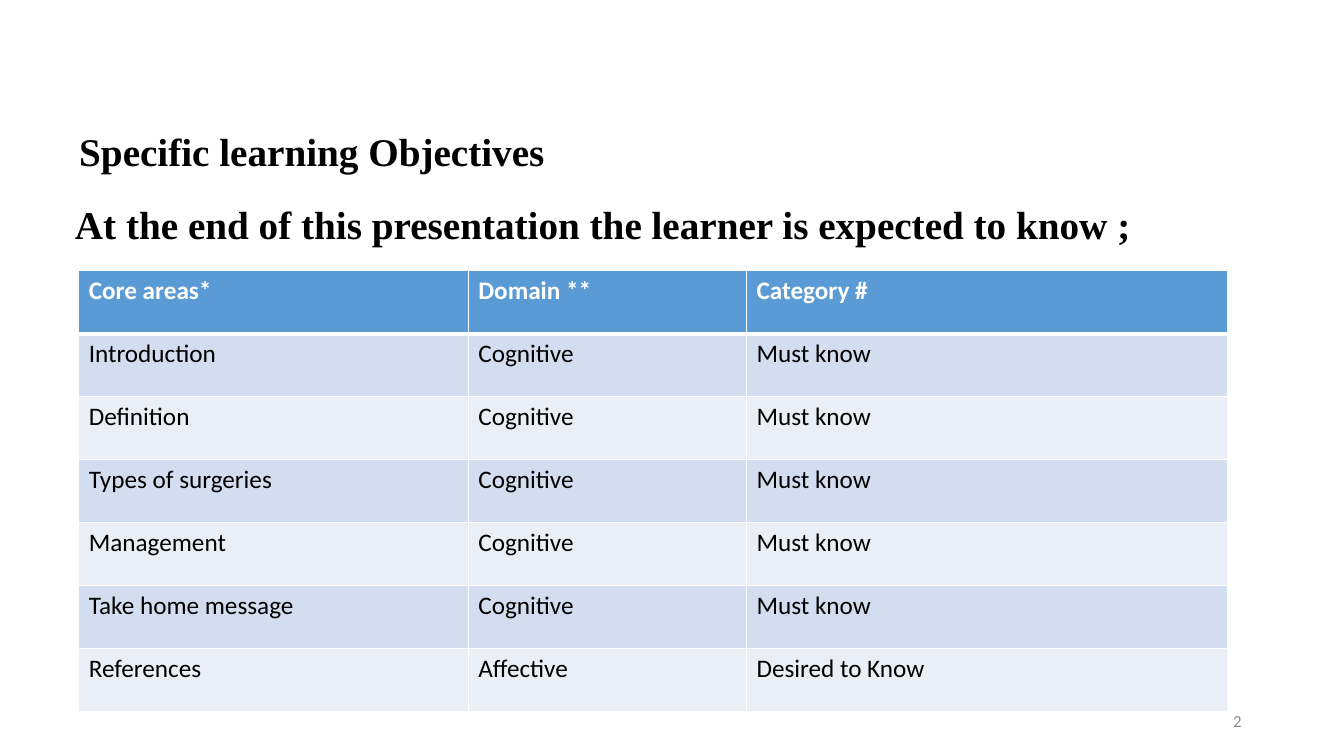
from dataclasses import dataclass

from lxml.etree import SubElement
from pptx import Presentation
from pptx.dml.color import RGBColor
from pptx.enum.text import MSO_ANCHOR, PP_ALIGN
from pptx.oxml.ns import qn
from pptx.slide import Slide
from pptx.table import _Cell
from pptx.text.text import _Paragraph
from pptx.util import Emu, Pt

PX = 9525
BLACK = RGBColor(0x00, 0x00, 0x00)
WHITE = RGBColor(0xFF, 0xFF, 0xFF)
GREY = RGBColor(0x8C, 0x8C, 0x8C)
HEADER_BLUE = RGBColor(0x5B, 0x9B, 0xD5)
BAND_DARK = RGBColor(0xD2, 0xDE, 0xEF)
BAND_LIGHT = RGBColor(0xEA, 0xEF, 0xF7)

TABLE_LEFT, TABLE_TOP, ROW_HEIGHT = 75, 258, 60
COLUMN_WIDTHS = (371, 265, 458)


@dataclass(frozen=True)
class Style:
    """The look of a paragraph."""

    font: str
    size: int
    color: RGBColor
    bold: bool = False


@dataclass(frozen=True)
class Label:
    """A line of text in a box measured in px."""

    text: str
    left: int
    top: int
    width: int
    height: int
    style: Style
    anchor: MSO_ANCHOR = MSO_ANCHOR.MIDDLE
    align: PP_ALIGN = PP_ALIGN.LEFT
    line_spacing: float = 1.0


@dataclass(frozen=True)
class Objective:
    """A row of the objectives table."""

    area: str
    domain: str = "Cognitive"
    category: str = "Must know"


HEADING = Style("Times New Roman", 28, BLACK, True)
HEADER_CELL = Style("Calibri", 18, WHITE, True)
BODY_CELL = Style("Calibri", 18, BLACK)
PAGE_NUMBER = Style("Calibri", 12, GREY)

LABELS = (
    Label("Specific learning Objectives", 66, 111, 1063, 70, HEADING, line_spacing=0.9),
    Label("At the end of this presentation the learner is expected to know ;",
          62, 186, 1090, 55, HEADING, MSO_ANCHOR.TOP),
    Label("2", 904, 667, 288, 38, PAGE_NUMBER, align=PP_ALIGN.RIGHT),
)

OBJECTIVES = (
    Objective("Core areas*", "Domain **", "Category #"),
    Objective("Introduction"),
    Objective("Definition"),
    Objective("Types of surgeries"),
    Objective("Management"),
    Objective("Take home message"),
    Objective("References", "Affective", "Desired to Know"),
)


def write(para: _Paragraph, text: str, style: Style) -> None:
    """Put styled text into a paragraph."""
    para.text = text
    para.font.name = style.font
    para.font.size = Pt(style.size)
    para.font.bold = style.bold
    para.font.color.rgb = style.color


def add_label(page: Slide, label: Label) -> None:
    """Draw one label on the page."""
    box = page.shapes.add_textbox(
        *(Emu(length * PX) for length in (label.left, label.top, label.width, label.height)))
    frame = box.text_frame
    frame.word_wrap = True
    frame.vertical_anchor = label.anchor
    para = frame.paragraphs[0]
    para.alignment = label.align
    para.line_spacing = label.line_spacing
    write(para, label.text, label.style)


def set_borders(cell: _Cell, top: int, bottom: int) -> None:
    """Give a cell white borders, with top and bottom widths in points."""
    properties = cell._tc.get_or_add_tcPr()
    sides = (("a:lnL", 1), ("a:lnR", 1), ("a:lnT", top), ("a:lnB", bottom))
    for position, (tag, width) in enumerate(sides):
        line = SubElement(properties, qn(tag), w=str(Pt(width)))
        fill = SubElement(line, qn("a:solidFill"))
        SubElement(fill, qn("a:srgbClr"), val=str(WHITE))
        properties.insert(position, line)


def add_objectives(page: Slide) -> None:
    """Draw the banded table of objectives."""
    table = page.shapes.add_table(
        len(OBJECTIVES), len(COLUMN_WIDTHS), Emu(TABLE_LEFT * PX), Emu(TABLE_TOP * PX),
        Emu(sum(COLUMN_WIDTHS) * PX), Emu(len(OBJECTIVES) * ROW_HEIGHT * PX)).table
    for column, width in zip(table.columns, COLUMN_WIDTHS):
        column.width = Emu(width * PX)
    for index, objective in enumerate(OBJECTIVES):
        table.rows[index].height = Emu(ROW_HEIGHT * PX)
        band = BAND_DARK if index % 2 else BAND_LIGHT
        texts = (objective.area, objective.domain, objective.category)
        for cell, text in zip(table.rows[index].cells, texts):
            cell.fill.solid()
            cell.fill.fore_color.rgb = band if index else HEADER_BLUE
            set_borders(cell, top=3 if index == 1 else 1, bottom=1 if index else 3)
            write(cell.text_frame.paragraphs[0], text, BODY_CELL if index else HEADER_CELL)


def main() -> None:
    """Build and save the deck."""
    deck = Presentation()
    deck.slide_width, deck.slide_height = Emu(1280 * PX), Emu(720 * PX)
    page = deck.slides.add_slide(deck.slide_layouts[6])
    add_objectives(page)
    for label in LABELS:
        add_label(page, label)
    deck.save("out.pptx")


if __name__ == "__main__":
    main()
